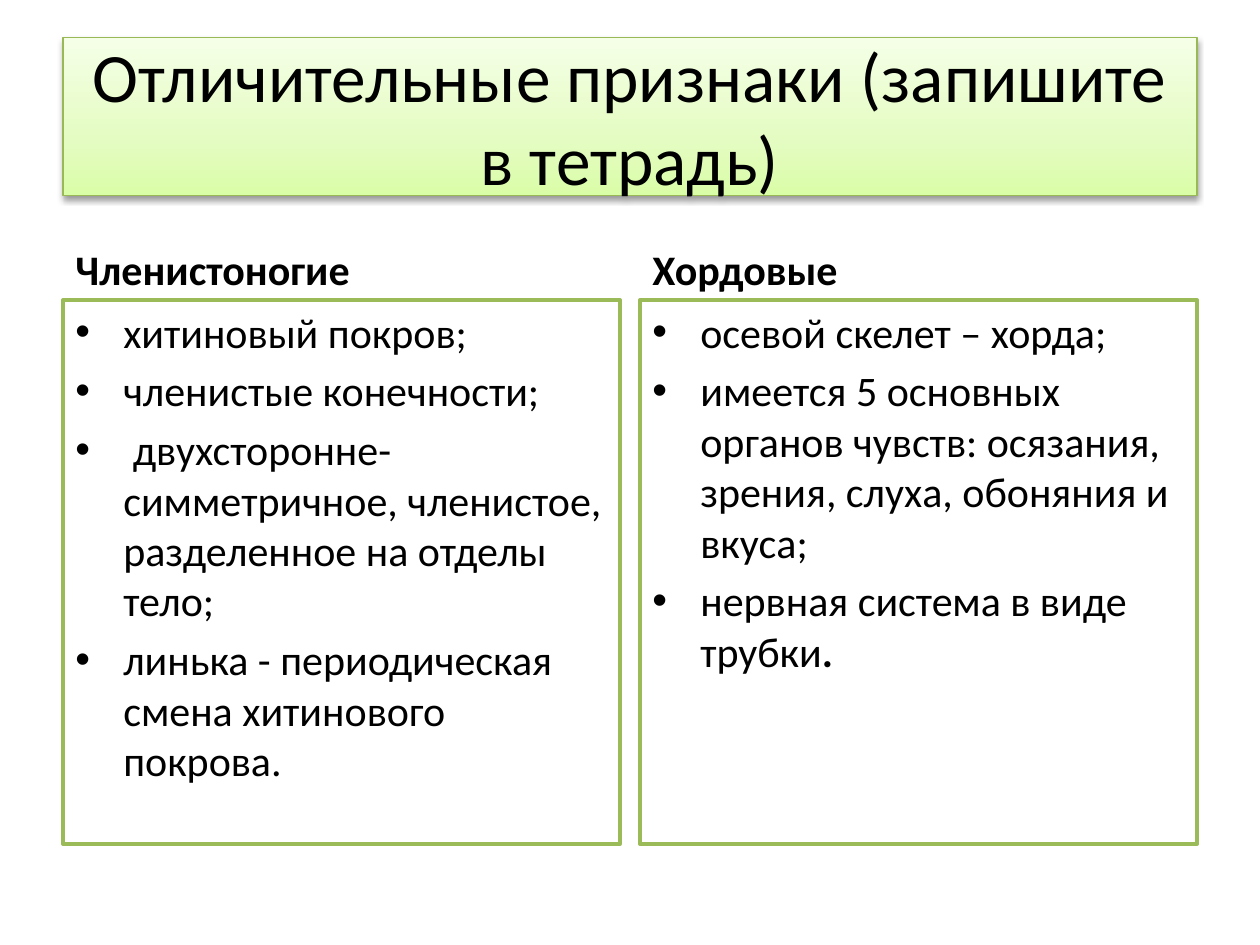
import copy

import lxml.etree
import pptx
import pptx.dml.color
import pptx.enum.text
import pptx.oxml
import pptx.oxml.ns
import pptx.util

qn = pptx.oxml.ns.qn
Inches, Pt = pptx.util.Inches, pptx.util.Pt
MSO_ANCHOR, PP_ALIGN = pptx.enum.text.MSO_ANCHOR, pptx.enum.text.PP_ALIGN

COLUMNS = [
    ("Членистоногие", [
        "хитиновый покров;",
        "членистые конечности;",
        " двухсторонне-симметричное, членистое, разделенное на отделы тело;",
        "линька - периодическая смена хитинового покрова.",
    ]),
    ("Хордовые", [
        "осевой скелет – хорда;",
        "имеется 5 основных органов чувств: осязания, зрения, слуха, обоняния и вкуса;",
        "нервная система в виде трубки",
    ]),
]


def rgb(color):
    return pptx.dml.color.RGBColor.from_string(color)


class ComparisonSlide:
    """A title banner above equal columns, each with a heading and a list."""
    font, text_color = "Calibri", "000000"
    title_size, body_size = 39.6, 24
    margin, column_width, gap = 0.5, 4.42, 0.16
    title_row, heading_row, list_row = (0.3, 1.25), (1.68, 0.7), (2.38, 4.32)
    title_stops = [(0, "DAFDA7"), (0.35, "E4FCC2"), (1, "F5FFE7")]
    title_line, list_line, list_fill = "98B955", "9BBB59", "FFFFFF"

    def __init__(self, prs):
        self.slide = prs.slides.add_slide(prs.slide_layouts[5])

    def cell(self, column, row, span=1):
        """Left, top, width and height of a grid cell."""
        left = self.margin + column * (self.column_width + self.gap)
        width = span * self.column_width + (span - 1) * self.gap
        return [Inches(v) for v in (left, row[0], width, row[1])]

    def style(self, p, size, bold=False):
        for r in p.runs:
            r.font.name, r.font.size, r.font.bold = self.font, Pt(size), bold
            r.font.color.rgb = rgb(self.text_color)

    def title(self, text):
        sp = self.slide.shapes.title
        sp.left, sp.top, sp.width, sp.height = self.cell(0, self.title_row, 2)
        self.fill_gradient(sp)
        sp.line.color.rgb = rgb(self.title_line)
        sp.line.width = Pt(0.75)
        self.add_shadow(sp)
        tf = sp.text_frame
        tf.text = text
        tf.word_wrap = True
        tf.auto_size = pptx.enum.text.MSO_AUTO_SIZE.NONE
        tf.vertical_anchor = MSO_ANCHOR.MIDDLE
        tf.paragraphs[0].alignment = PP_ALIGN.CENTER
        self.style(tf.paragraphs[0], self.title_size)

    def fill_gradient(self, sp):
        sp.fill.gradient()
        sp.fill.gradient_angle = 90
        stop_list = sp._element.spPr.find(qn("a:gradFill")).find(qn("a:gsLst"))
        stop_list.append(copy.deepcopy(stop_list[-1]))
        for stop, (position, color) in zip(sp.fill.gradient_stops, self.title_stops):
            stop.position = position
            stop.color.rgb = rgb(color)

    def add_shadow(self, sp):
        sp.shadow.inherit = False
        effects = sp._element.spPr.find(qn("a:effectLst"))
        shadow = lxml.etree.SubElement(
            effects, qn("a:outerShdw"), blurRad=str(Pt(3.1)), dist=str(Pt(1.6)),
            dir="5400000", rotWithShape="0")
        color = lxml.etree.SubElement(shadow, qn("a:srgbClr"), val="000000")
        lxml.etree.SubElement(color, qn("a:alpha"), val="38000")

    def text_box(self, column, row, anchor):
        sp = self.slide.shapes.add_textbox(*self.cell(column, row))
        sp.text_frame.word_wrap = True
        sp.text_frame.vertical_anchor = anchor
        return sp

    def heading(self, column, text):
        tf = self.text_box(column, self.heading_row, MSO_ANCHOR.BOTTOM).text_frame
        tf.text = text
        self.style(tf.paragraphs[0], self.body_size, bold=True)

    def bullet_list(self, column, items):
        sp = self.text_box(column, self.list_row, MSO_ANCHOR.TOP)
        sp.fill.solid()
        sp.fill.fore_color.rgb = rgb(self.list_fill)
        sp.line.color.rgb = rgb(self.list_line)
        sp.line.width = Pt(2)
        tf = sp.text_frame
        tf.text = "\n".join(items)
        for i, p in enumerate(tf.paragraphs):
            self.add_bullet(p)
            if i:
                p.space_before = Pt(0.2 * self.body_size)
            self.style(p, self.body_size)
        return tf

    def add_bullet(self, p):
        pPr = p._p.get_or_add_pPr()
        indent = Inches(0.38)
        pPr.set("marL", str(indent))
        pPr.set("indent", str(-indent))
        lxml.etree.SubElement(pPr, qn("a:buFont"), typeface="Arial")
        lxml.etree.SubElement(pPr, qn("a:buChar"), char="•")

    def bold_ending(self, p, text):
        r = p.add_run()
        r.text = text
        self.style(p, self.body_size)
        r.font.bold = True


def main():
    prs = pptx.Presentation()
    prs.slide_width, prs.slide_height = Inches(10), Inches(7.5)
    s = ComparisonSlide(prs)
    s.title("Отличительные признаки (запишите в тетрадь)")
    for column, (heading, items) in enumerate(COLUMNS):
        s.heading(column, heading)
        tf = s.bullet_list(column, items)
    s.bold_ending(tf.paragraphs[-1], ".")
    prs.save("out.pptx")


if __name__ == "__main__":
    main()
